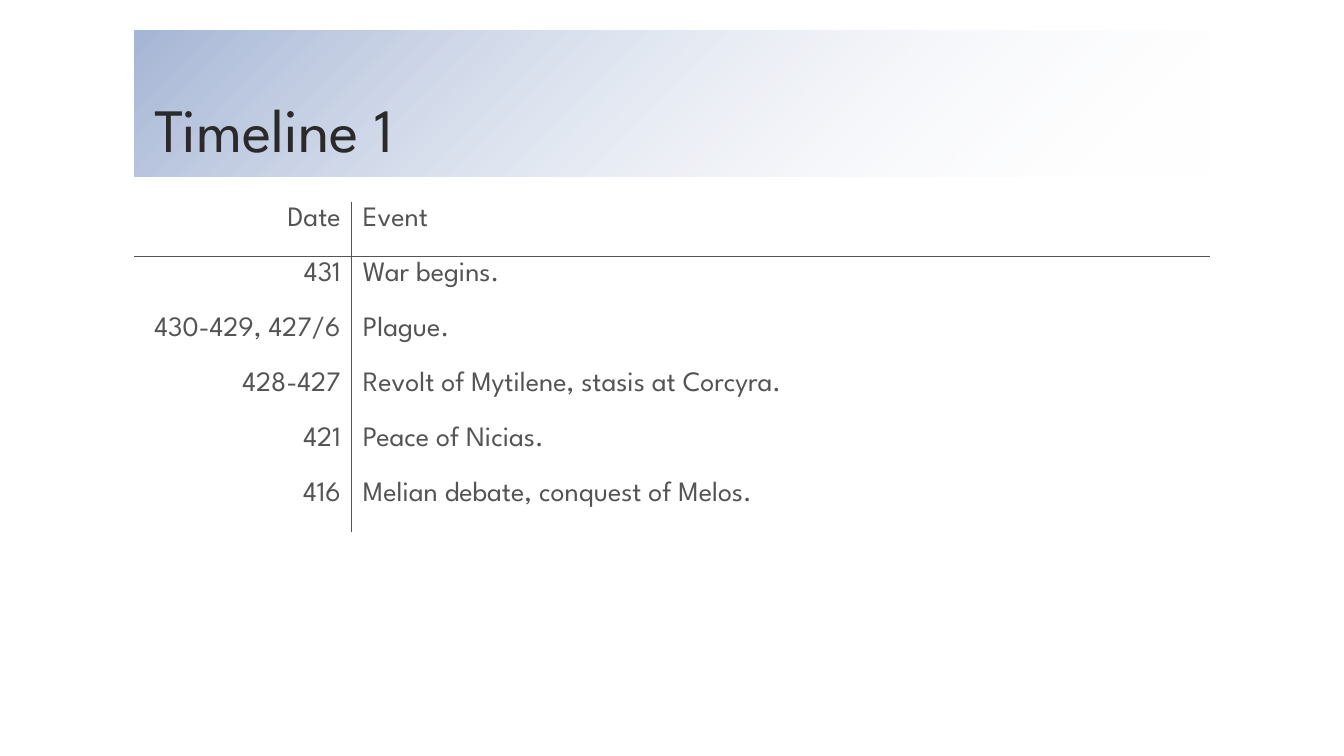
from lxml import etree
from pptx import Presentation
from pptx.dml.color import RGBColor
from pptx.enum.text import MSO_ANCHOR, MSO_AUTO_SIZE, PP_ALIGN
from pptx.oxml.ns import qn
from pptx.util import Inches, Pt

FONT = "League Spartan"
COLORS = {
    "title": "2A2A2A",
    "text": "545454",
    "rule": "545454",
    "band_start": "A6B6D6",
    "band_end": "FFFFFF",
}
LEFT, WIDTH = Inches(1.33), Inches(10.67)
COLUMN_WIDTHS = (2.16, 8.51)
TABLE_HEIGHT = 3.28
EVENTS = [
    ("Date", "Event"),
    ("431", "War begins."),
    ("430-429, 427/6", "Plague."),
    ("428-427", "Revolt of Mytilene, stasis at Corcyra."),
    ("421", "Peace of Nicias."),
    ("416", "Melian debate, conquest of Melos."),
]


def rgb(name):
    return RGBColor.from_string(COLORS[name])


def add_run(p, text, size, color):
    r = p.add_run()
    r.text = text
    r.font.name = FONT
    r.font.size = Pt(size)
    r.font.color.rgb = rgb(color)


def fade_fill(shape):
    """Fill with a diagonal gradient that ends fully transparent."""
    shape.fill.gradient()
    shape.fill.gradient_angle = 315
    for stop, name, position in zip(shape.fill.gradient_stops,
                                    ("band_start", "band_end"), (0, 1)):
        stop.color.rgb = rgb(name)
        stop.position = position
    end_color = list(shape.element.spPr.iter(qn("a:srgbClr")))[-1]
    etree.SubElement(end_color, qn("a:alpha"), val="0")


def add_title(s, text):
    title = s.shapes.title
    title.left, title.top = LEFT, Inches(0.3)
    title.width, title.height = WIDTH, Inches(1.45)
    fade_fill(title)
    tf = title.text_frame
    tf.word_wrap = True
    tf.auto_size = MSO_AUTO_SIZE.NONE
    tf.vertical_anchor = MSO_ANCHOR.BOTTOM
    tf.margin_left = tf.margin_right = Inches(0.2)
    tf.margin_top = tf.margin_bottom = Inches(0.1)
    p = tf.paragraphs[0]
    p.alignment = PP_ALIGN.LEFT
    p.line_spacing = 0.9
    add_run(p, text, 44, "title")


def set_borders(cell, ruled):
    """Rule the sides named in ruled and clear the others."""
    tc_pr = cell._tc.get_or_add_tcPr()
    for side in "LRTB":
        ln = etree.SubElement(tc_pr, qn(f"a:ln{side}"), w=str(Pt(1)))
        if side in ruled:
            fill = etree.SubElement(ln, qn("a:solidFill"))
            etree.SubElement(fill, qn("a:srgbClr"), val=COLORS["rule"])
        else:
            etree.SubElement(ln, qn("a:noFill"))


def fill_cell(cell, text, row, col):
    header_rule = {0: "B", 1: "T"}.get(row, "")
    set_borders(cell, "RL"[col] + header_rule)
    cell.fill.background()
    cell.margin_left = cell.margin_right = Inches(0.11)
    cell.margin_top = cell.margin_bottom = Inches(0.05)
    p = cell.text_frame.paragraphs[0]
    p.alignment = (PP_ALIGN.RIGHT, PP_ALIGN.LEFT)[col]
    p.space_before = Pt(4)
    add_run(p, text, 20, "text")


def add_timeline(s, events):
    table = s.shapes.add_table(len(events), len(COLUMN_WIDTHS), LEFT, Inches(2),
                               WIDTH, Inches(TABLE_HEIGHT)).table
    table.first_row = table.horz_banding = False
    for column, width in zip(table.columns, COLUMN_WIDTHS):
        column.width = Inches(width)
    for row, texts in enumerate(events):
        for col, text in enumerate(texts):
            fill_cell(table.cell(row, col), text, row, col)


def main():
    prs = Presentation()
    prs.slide_width, prs.slide_height = Inches(13.33), Inches(7.5)
    s = prs.slides.add_slide(prs.slide_layouts[5])
    add_title(s, "Timeline 1")
    add_timeline(s, EVENTS)
    prs.save("out.pptx")


if __name__ == "__main__":
    main()
